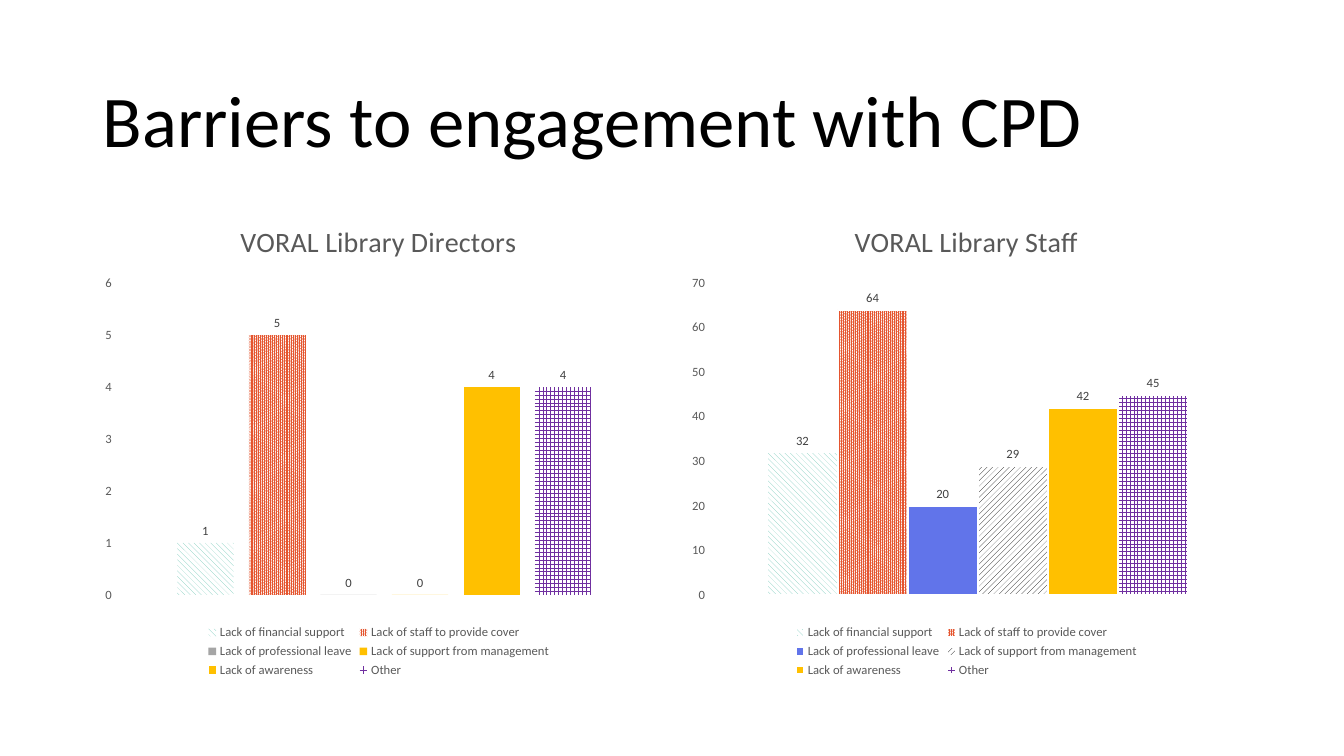
from pptx import Presentation
from pptx.chart.data import CategoryChartData
from pptx.dml.color import RGBColor
from pptx.enum.chart import XL_CHART_TYPE, XL_LABEL_POSITION as LabelPosition
from pptx.enum.chart import XL_LEGEND_POSITION as LegendPosition, XL_TICK_MARK as Tick
from pptx.enum.dml import MSO_PATTERN as Pattern
from pptx.enum.text import MSO_ANCHOR, MSO_AUTO_SIZE, PP_ALIGN
from pptx.oxml import parse_xml
from pptx.oxml.ns import nsdecls, qn
from pptx.util import Emu, Pt

BLACK = RGBColor(0x00, 0x00, 0x00)
WHITE = RGBColor(0xFF, 0xFF, 0xFF)
DARK_GRAY = RGBColor(0x40, 0x40, 0x40)
TEXT_GRAY = RGBColor(0x59, 0x59, 0x59)
GRAY = RGBColor(0xA5, 0xA5, 0xA5)
GREEN = RGBColor(0x78, 0xC9, 0xBA)
RED = RGBColor(0xE5, 0x55, 0x2F)
BLUE = RGBColor(0x61, 0x74, 0xEA)
GOLD = RGBColor(0xFF, 0xC0, 0x00)
PURPLE = RGBColor(0x70, 0x30, 0xA0)

BARRIERS = [
    "Lack of financial support",
    "Lack of staff to provide cover",
    "Lack of professional leave",
    "Lack of support from management",
    "Lack of awareness",
    "Other",
]
FINANCE = (GREEN, Pattern.WIDE_DOWNWARD_DIAGONAL)
COVER = (RED, Pattern.PERCENT_90)
AWARENESS = (GOLD, Pattern.DARK_VERTICAL)
OTHER = (PURPLE, Pattern.LARGE_GRID)
DIRECTOR_FILLS = [FINANCE, COVER, (GRAY, None), (GOLD, None), AWARENESS, OTHER]
STAFF_FILLS = [
    FINANCE, COVER, (BLUE, Pattern.DARK_HORIZONTAL),
    (BLACK, Pattern.WIDE_UPWARD_DIAGONAL), AWARENESS, OTHER,
]


def px(length):
    """Turn px, at 100 to the inch, into EMU."""
    return Emu(length * 9144)


class SlideBuilder:
    """Hold the style and the current slide."""

    def __init__(self, slide, font_name):
        """Keep the slide and its font."""
        self.slide = slide
        self.font_name = font_name

    def style(self, font, size, color):
        """Apply the slide's font at a size and colour."""
        font.name = self.font_name
        font.size = Pt(size)
        font.bold = False
        font.color.rgb = color

    def title(self, text, left, top, width, height):
        """Place and format the slide title."""
        box = self.slide.shapes.title
        box.left, box.top, box.width, box.height = map(px, (left, top, width, height))
        frame = box.text_frame
        frame.text = text
        frame.word_wrap = True
        frame.auto_size = MSO_AUTO_SIZE.NONE
        frame.vertical_anchor = MSO_ANCHOR.MIDDLE
        para = frame.paragraphs[0]
        para.alignment = PP_ALIGN.LEFT
        para.line_spacing = 0.9
        self.style(para.runs[0].font, 52, BLACK)

    def column_chart(self, title, values, fills, left, top, width, height):
        """Add a titled column chart with one series per barrier."""
        data = CategoryChartData()
        data.categories = ["1"]
        for name, value in zip(BARRIERS, values):
            data.add_series(name, [value])
        frame = self.slide.shapes.add_chart(
            XL_CHART_TYPE.COLUMN_CLUSTERED, *map(px, (left, top, width, height)), data)
        chart = frame.chart
        self.style(chart.font, 10, BLACK)
        chart.has_title = True
        chart.chart_title.include_in_layout = False
        title_frame = chart.chart_title.text_frame
        title_frame.text = title
        self.style(title_frame.paragraphs[0].runs[0].font, 20, TEXT_GRAY)
        chart.has_legend = True
        chart.legend.position = LegendPosition.BOTTOM
        chart.legend.include_in_layout = False
        self.style(chart.legend.font, 9, TEXT_GRAY)
        chart.category_axis.visible = False
        chart.plots[0].vary_by_categories = False
        for series, (color, pattern) in zip(chart.plots[0].series, fills):
            self.series(series, color, pattern)
        return chart

    def series(self, series, color, pattern):
        """Fill a series and label its values."""
        fill = series.format.fill
        if pattern is None:
            fill.solid()
        else:
            fill.patterned()
            fill.pattern = pattern
            fill.back_color.rgb = WHITE
        fill.fore_color.rgb = color
        labels = series.data_labels
        labels.show_value = True
        labels.position = LabelPosition.OUTSIDE_END
        self.style(labels.font, 9, DARK_GRAY)

    def value_axis(self, chart, maximum, step, tick):
        """Scale and format the value axis."""
        axis = chart.value_axis
        axis.minimum_scale, axis.maximum_scale, axis.major_unit = 0, maximum, step
        axis.has_major_gridlines = False
        axis.major_tick_mark = tick
        axis.minor_tick_mark = Tick.NONE
        axis.format.line.fill.background()
        self.style(axis.tick_labels.font, 9, TEXT_GRAY)

    def plot_area(self, chart, left, top, width, height):
        """Place the inner plot area by fractions of the chart."""
        area = chart.element.find(qn("c:chart")).find(qn("c:plotArea"))
        for layout in area.findall(qn("c:layout")):
            area.remove(layout)
        sizes = {"x": left, "y": top, "w": width, "h": height}
        values = "".join(f'<c:{key} val="{size}"/>' for key, size in sizes.items())
        area.insert(0, parse_xml(
            f'<c:layout {nsdecls("c")}><c:manualLayout><c:layoutTarget val="inner"/>'
            '<c:xMode val="edge"/><c:yMode val="edge"/>'
            f'{values}</c:manualLayout></c:layout>'))


def main():
    """Build and save the slide."""
    deck = Presentation()
    deck.slide_width, deck.slide_height = px(1333), px(750)
    page = SlideBuilder(deck.slides.add_slide(deck.slide_layouts[5]), "Calibri")
    page.title("Barriers to engagement with CPD", 92, 61, 1150, 124)

    directors = page.column_chart(
        "VORAL Library Directors", [1, 5, 0, 0, 4, 4], DIRECTOR_FILLS, 92, 200, 567, 476)
    directors.plots[0].gap_width = 219
    directors.plots[0].overlap = -27
    page.value_axis(directors, 6, 1, Tick.NONE)
    page.plot_area(directors, 0.04, 0.17, 0.94, 0.65)

    staff = page.column_chart(
        "VORAL Library Staff", [32, 64, 20, 29, 42, 45], STAFF_FILLS, 675, 200, 567, 476)
    staff.plots[0].gap_width = 150
    page.value_axis(staff, 70, 10, Tick.OUTSIDE)
    page.plot_area(staff, 0.06, 0.17, 0.92, 0.65)
    for series in staff.plots[0].series:
        series.format.line.color.rgb = WHITE
        series.format.line.width = Pt(1.5)

    deck.save("out.pptx")


if __name__ == "__main__":
    main()
